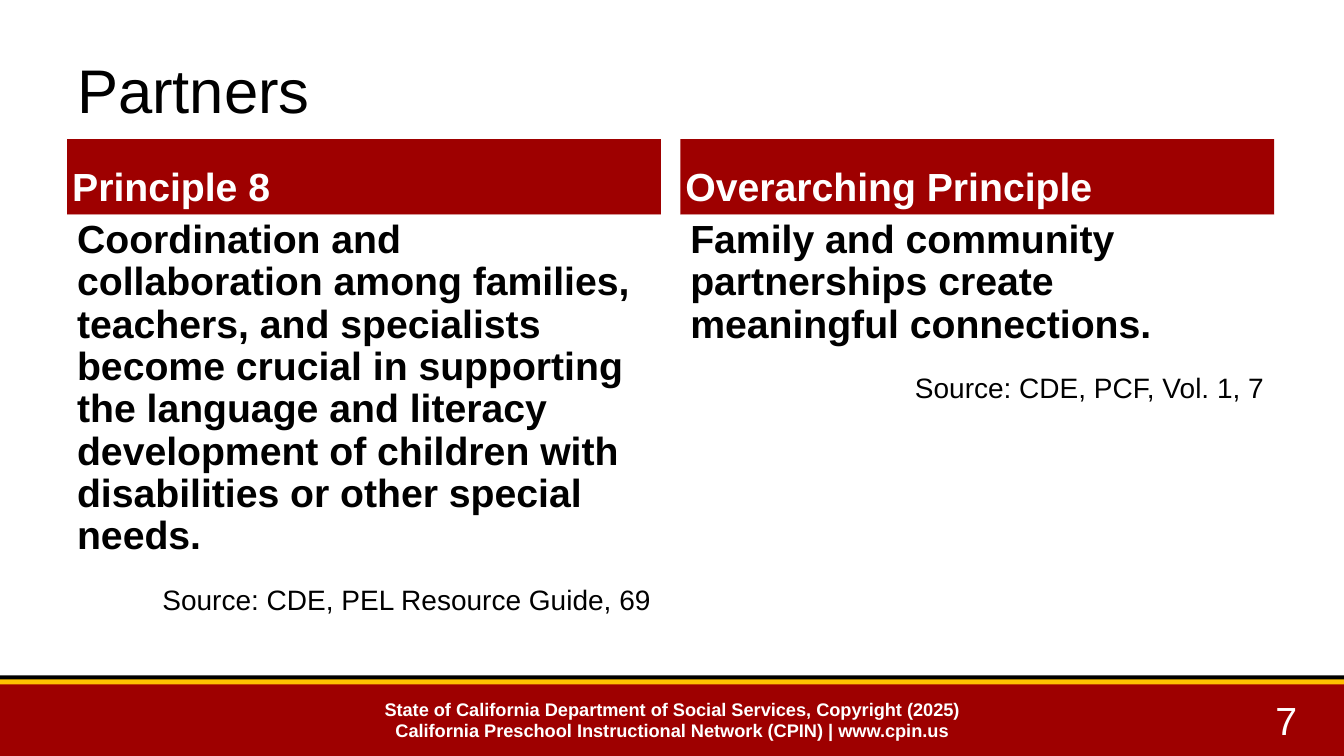
from dataclasses import dataclass

from pptx import Presentation
from pptx.dml.color import RGBColor
from pptx.enum.shapes import MSO_SHAPE
from pptx.enum.text import MSO_ANCHOR, PP_ALIGN
from pptx.util import Pt

FONT = "Arial"
RED, GOLD, BLACK, WHITE = "9E0000", "FFC000", "000000", "FFFFFF"
SLIDE_WIDTH, SLIDE_HEIGHT = 960, 540
COLUMN_WIDTH = 424.08
HEADING_TOP, HEADING_HEIGHT = 99.36, 54
BODY_TOP, BODY_HEIGHT = 153.36, 303.84
FOOTER_TOP = 488.16
FOOTER_HEIGHT = SLIDE_HEIGHT - FOOTER_TOP
BODY_MARGINS = (7.2, 3.6, 7.2, 3.6)
HEADING_MARGINS = (3.6, 1.44, 3.6, 3.6)


@dataclass
class Box:
    left: float
    top: float
    width: float
    height: float
    fill: str | None = None
    anchor: MSO_ANCHOR = MSO_ANCHOR.TOP
    margins: tuple[float, ...] = BODY_MARGINS


@dataclass
class Line:
    text: str
    size: float
    color: str = BLACK
    bold: bool = False
    align: PP_ALIGN = PP_ALIGN.LEFT
    spacing: float = 1.0
    before: float = 0
    after: float = 0


@dataclass
class Column:
    left: float
    heading: str
    statement: str
    source: str


def color_of(value: str) -> RGBColor:
    return RGBColor.from_string(value)


def set_attributes(target, values: dict) -> None:
    for name, value in values.items():
        setattr(target, name, value)


def draw_box(slide, box: Box, lines: tuple[Line, ...] = ()) -> None:
    place = [Pt(length) for length in (box.left, box.top, box.width, box.height)]
    if box.fill is None:
        shape = slide.shapes.add_textbox(*place)
    else:
        shape = slide.shapes.add_shape(MSO_SHAPE.RECTANGLE, *place)
        shape.shadow.inherit = False
        shape.fill.solid()
        shape.fill.fore_color.rgb = color_of(box.fill)
        shape.line.fill.background()

    frame = shape.text_frame
    left, top, right, bottom = (Pt(margin) for margin in box.margins)
    set_attributes(frame, {
        "word_wrap": True, "vertical_anchor": box.anchor,
        "margin_left": left, "margin_top": top,
        "margin_right": right, "margin_bottom": bottom,
    })
    for index, line in enumerate(lines):
        paragraph = frame.add_paragraph() if index else frame.paragraphs[0]
        set_attributes(paragraph, {
            "alignment": line.align, "line_spacing": line.spacing,
            "space_before": Pt(line.before), "space_after": Pt(line.after),
        })
        run = paragraph.add_run()
        run.text = line.text
        set_attributes(run.font, {"name": FONT, "size": Pt(line.size), "bold": line.bold})
        run.font.color.rgb = color_of(line.color)


def draw_column(slide, column: Column) -> None:
    heading = Line(column.heading, 28, WHITE, True, spacing=0.9, after=5)
    statement = Line(column.statement, 28, bold=True, spacing=0.9, after=5)
    source = Line(column.source, 20, align=PP_ALIGN.RIGHT, spacing=0.9, before=15, after=5)
    draw_box(slide, Box(column.left, HEADING_TOP, COLUMN_WIDTH, HEADING_HEIGHT, RED,
                        MSO_ANCHOR.BOTTOM, HEADING_MARGINS), (heading,))
    draw_box(slide, Box(column.left, BODY_TOP, COLUMN_WIDTH, BODY_HEIGHT, WHITE),
             (statement, source))


STRIPES = (
    Box(0, 482.4, SLIDE_WIDTH, 48.96, BLACK),
    Box(0, FOOTER_TOP, SLIDE_WIDTH, FOOTER_HEIGHT, RED),
    Box(0, 485.28, SLIDE_WIDTH, 3.6, GOLD),
)
FOOTER_TEXTS = (
    "State of California Department of Social Services, Copyright (2025)",
    "California Preschool Instructional Network (CPIN) | www.cpin.us",
)
COLUMNS = (
    Column(48, "Principle 8",
           "Coordination and collaboration among families, teachers, and specialists "
           "become crucial in supporting the language and literacy development of "
           "children with disabilities or other special needs.",
           "Source: CDE, PEL Resource Guide, 69"),
    Column(486, "Overarching Principle",
           "Family and community partnerships create meaningful connections.",
           "Source: CDE, PCF, Vol. 1, 7"),
)


def main() -> None:
    presentation = Presentation()
    set_attributes(presentation, {"slide_width": Pt(SLIDE_WIDTH),
                                  "slide_height": Pt(SLIDE_HEIGHT)})
    slide = presentation.slides.add_slide(presentation.slide_layouts[6])

    # Footer band with slide number and copyright
    for stripe in STRIPES:
        draw_box(slide, stripe)
    draw_box(slide, Box(877.68, FOOTER_TOP, 82.32, FOOTER_HEIGHT, anchor=MSO_ANCHOR.MIDDLE),
             (Line("7", 28, WHITE, align=PP_ALIGN.CENTER),))
    draw_box(slide, Box(113.04, FOOTER_TOP, 733.68, FOOTER_HEIGHT, anchor=MSO_ANCHOR.MIDDLE),
             tuple(Line(text, 13, WHITE, True, PP_ALIGN.CENTER) for text in FOOTER_TEXTS))

    # Title
    draw_box(slide, Box(48, 3.6, 864, 90, anchor=MSO_ANCHOR.BOTTOM),
             (Line("Partners", 44, spacing=0.85),))

    # Two principles side by side
    for column in COLUMNS:
        draw_column(slide, column)

    presentation.save("out.pptx")


if __name__ == "__main__":
    main()
